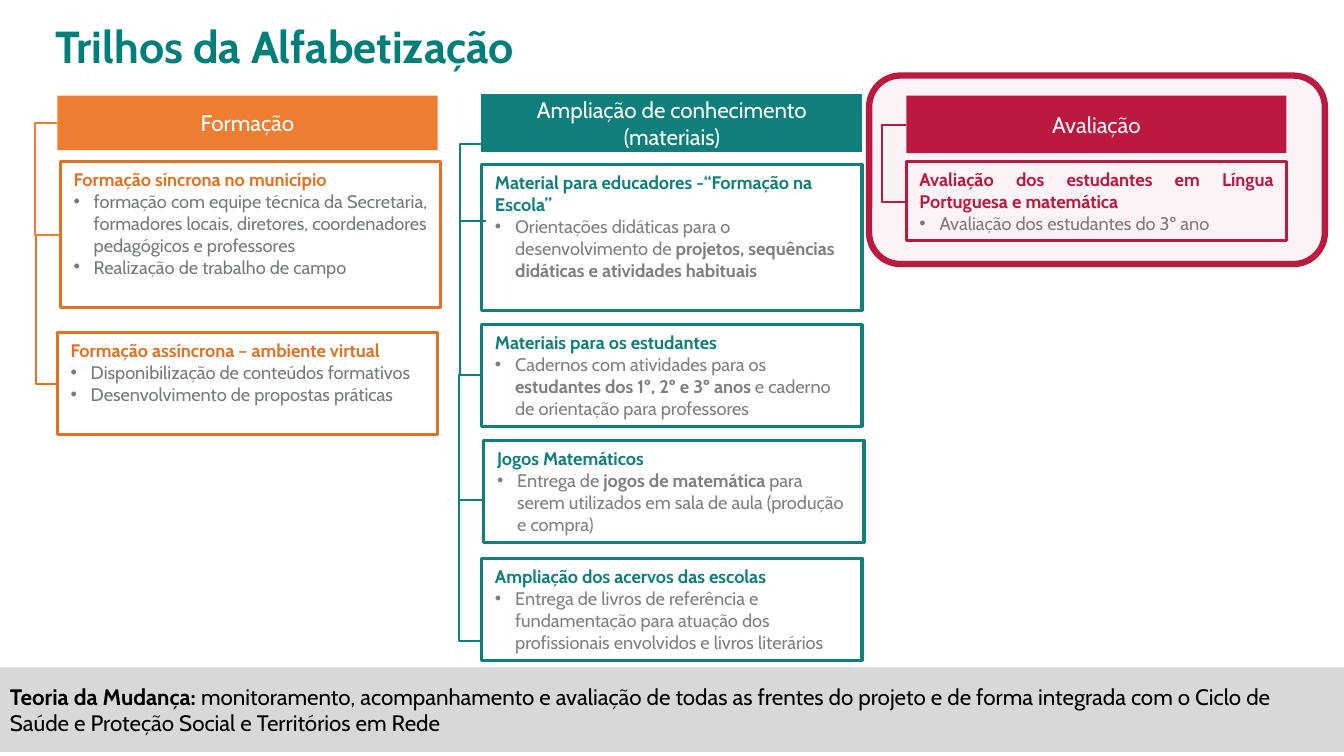
"""Build the "Trilhos da Alfabetização" slide: three tracks with bracketed cards."""
from dataclasses import dataclass

import lxml.etree
import pptx
import pptx.dml.color
import pptx.enum.shapes
import pptx.enum.text
import pptx.oxml.ns
import pptx.util

Inches = pptx.util.Inches
Pt = pptx.util.Pt
Shape = pptx.enum.shapes.MSO_SHAPE
Align = pptx.enum.text.PP_ALIGN
Anchor = pptx.enum.text.MSO_ANCHOR
qn = pptx.oxml.ns.qn

FONT = "Cabin"
ORANGE, BRIGHT_ORANGE = "E17223", "ED7D31"
TEAL, RED, WHITE = "107F7B", "BC1941", "FFFFFF"
GRAY, DARK_GRAY = "7F7F7F", "77797B"
COLUMN_WIDTH = 3.77
Runs = list[tuple[str, bool]]


@dataclass
class Header:
    text: str
    left: float
    top: float
    height: float
    color: str
    line: str | None = None


@dataclass
class Card:
    title: str
    bullets: list[Runs]
    left: float
    top: float
    height: float
    color: str
    text_color: str = GRAY
    fill: str | None = None
    align: Align = Align.JUSTIFY


@dataclass
class Bracket:
    start: tuple[float, float]
    end: tuple[float, float]
    spine: float
    color: str


HEADERS = [
    Header("Formação", 0.57, 0.95, 0.54, BRIGHT_ORANGE),
    Header("Ampliação de conhecimento (materiais)", 4.78, 0.94, 0.56, TEAL, TEAL),
    Header("Avaliação", 8.99, 0.95, 0.57, RED),
]
CARDS = [
    Card("Formação síncrona no município",
         [[("formação com equipe técnica da Secretaria, formadores locais, diretores, "
            "coordenadores pedagógicos e professores", False)],
          [("Realização de trabalho de campo", False)]],
         0.6, 1.6, 1.45, ORANGE, DARK_GRAY, WHITE),
    Card("Formação assíncrona – ambiente virtual",
         [[("Disponibilização de conteúdos formativos", False)],
          [("Desenvolvimento de propostas práticas", False)]],
         0.57, 3.3, 1.01, ORANGE, DARK_GRAY),
    Card("Material para educadores -“Formação na Escola”",
         [[("Orientações didáticas para o desenvolvimento de ", False),
           ("projetos, sequências didáticas e atividades habituais", True)]],
         4.78, 1.63, 1.45, TEAL, align=Align.LEFT),
    Card("Materiais para os estudantes",
         [[("Cadernos com atividades para os ", False),
           ("estudantes dos 1º, 2º e 3º anos ", True),
           ("e caderno de orientação para professores", False)]],
         4.78, 3.22, 1.01, TEAL),
    Card("Jogos Matemáticos",
         [[("Entrega de ", False), ("jogos de matemática ", True),
           ("para serem utilizados em sala de aula (produção e compra)", False)]],
         4.8, 4.37, 1.01, TEAL),
    Card("Ampliação dos acervos das escolas",
         [[("Entrega de livros de referência e fundamentação para atuação dos "
            "profissionais envolvidos e livros literários", False)]],
         4.78, 5.54, 1.01, TEAL),
    Card("Avaliação dos estudantes em Língua Portuguesa e matemática",
         [[("Avaliação dos estudantes do 3º ano", False)]],
         8.99, 1.6, 0.79, RED),
]
BRACKETS = [
    Bracket((0.57, 3.81), (0.36, 2.33), 0.36, ORANGE),
    Bracket((4.79, 3.72), (4.56, 2.17), 4.56, TEAL),
    Bracket((4.78, 4.96), (4.55, 3.71), 4.55, TEAL),
    Bracket((4.78, 6.36), (4.55, 4.86), 4.55, TEAL),
    Bracket((8.99, 1.24), (9.0, 2.0), 8.74, RED),
    Bracket((4.81, 1.43), (4.82, 2.19), 4.56, TEAL),
    Bracket((0.57, 1.22), (0.6, 2.33), 0.35, BRIGHT_ORANGE),
]
FOOTER: Runs = [
    ("Teoria da Mudança: ", True),
    ("monitoramento, acompanhamento e avaliação de todas as frentes do projeto e de forma "
     "integrada com o Ciclo de Saúde e Proteção Social e Territórios em Rede", False),
]


def rgb(color: str) -> pptx.dml.color.RGBColor:
    """Turn a hex string into a colour."""
    return pptx.dml.color.RGBColor.from_string(color)


def add_box(slide, shape: Shape, box: tuple, fill: str | None, line: str | None = None,
            width: float = 0.75):
    """Add a flat shape with an optional fill and outline."""
    sp = slide.shapes.add_shape(shape, *map(Inches, box))
    sp.shadow.inherit = False
    if fill:
        sp.fill.solid()
        sp.fill.fore_color.rgb = rgb(fill)
    else:
        sp.fill.background()
    if line:
        sp.line.color.rgb = rgb(line)
        sp.line.width = Pt(width)
    else:
        sp.line.fill.background()
    return sp


def set_frame(tf, anchor: Anchor, side: float, edge: float) -> None:
    """Set wrapping, anchoring and margins of a text frame."""
    tf.word_wrap = True
    tf.vertical_anchor = anchor
    tf.margin_left = tf.margin_right = Inches(side)
    tf.margin_top = tf.margin_bottom = Inches(edge)


def write(p, runs: Runs, size: float, color: str, align: Align = Align.LEFT) -> None:
    """Fill a paragraph with formatted runs."""
    p.alignment = align
    for text, bold in runs:
        r = p.add_run()
        r.text = text
        r.font.name = FONT
        r.font.size = Pt(size)
        r.font.bold = bold
        r.font.color.rgb = rgb(color)


def add_bullet(p, color: str) -> None:
    """Give a paragraph a coloured bullet with a hanging indent."""
    pPr = p._p.get_or_add_pPr()
    pPr.set("marL", str(Inches(0.2)))
    pPr.set("indent", str(Inches(-0.2)))
    clr = lxml.etree.SubElement(pPr, qn("a:buClr"))
    lxml.etree.SubElement(clr, qn("a:srgbClr"), val=color)
    lxml.etree.SubElement(pPr, qn("a:buFont"), typeface="Arial")
    lxml.etree.SubElement(pPr, qn("a:buChar"), char="•")


def add_card(slide, card: Card) -> None:
    """Draw an outlined card with a bold heading and bullets."""
    box = (card.left, card.top, COLUMN_WIDTH, card.height)
    tf = add_box(slide, Shape.RECTANGLE, box, card.fill, card.color, 2.25).text_frame
    set_frame(tf, Anchor.TOP, 0.13, 0.07)
    write(tf.paragraphs[0], [(card.title, True)], 13, card.color, card.align)
    for runs in card.bullets:
        p = tf.add_paragraph()
        add_bullet(p, card.text_color)
        write(p, runs, 13, card.text_color)


def add_bracket(slide, bracket: Bracket) -> None:
    """Draw an elbow connector that bends at the spine."""
    (x1, y1), (x2, y2) = bracket.start, bracket.end
    cx = slide.shapes.add_connector(pptx.enum.shapes.MSO_CONNECTOR.ELBOW,
                                    *map(Inches, (x1, y1, x2, y2)))
    cx.line.color.rgb = rgb(bracket.color)
    cx.line.width = Pt(1.5)
    spPr = cx._element.spPr
    lxml.etree.SubElement(spPr, qn("a:effectLst"))
    bend = round((bracket.spine - x1) / (x2 - x1) * 100000)
    guides = spPr.find(qn("a:prstGeom")).find(qn("a:avLst"))
    lxml.etree.SubElement(guides, qn("a:gd"), name="adj1", fmla=f"val {bend}")


def main() -> None:
    """Build and save the slide."""
    prs = pptx.Presentation()
    prs.slide_width, prs.slide_height = Inches(13.33), Inches(7.5)
    slide = prs.slides.add_slide(prs.slide_layouts[5])

    title = slide.shapes.title
    title.left, title.top, title.width, title.height = map(Inches, (0.55, 0.19, 9.73, 0.54))
    set_frame(title.text_frame, Anchor.TOP, 0, 0)
    title.text_frame.auto_size = pptx.enum.text.MSO_AUTO_SIZE.NONE
    write(title.text_frame.paragraphs[0], [("Trilhos da Alfabetização", True)], 32, "007E79")

    for header in HEADERS:
        box = (header.left, header.top, COLUMN_WIDTH, header.height)
        tf = add_box(slide, Shape.RECTANGLE, box, header.color, header.line).text_frame
        set_frame(tf, Anchor.MIDDLE, 0.1, 0.05)
        write(tf.paragraphs[0], [(header.text, False)], 16, WHITE, Align.CENTER)
    for card in CARDS:
        add_card(slide, card)
    for bracket in BRACKETS:
        add_bracket(slide, bracket)

    tf = add_box(slide, Shape.RECTANGLE, (0, 6.62, 13.33, 0.84), "D8D8D8").text_frame
    set_frame(tf, Anchor.MIDDLE, 0.1, 0.05)
    write(tf.paragraphs[0], FOOTER, 16, "000000")

    highlight = add_box(slide, Shape.ROUNDED_RECTANGLE, (8.62, 0.75, 4.52, 1.87), RED, RED, 4.5)
    tint = highlight._element.spPr.find(qn("a:solidFill")).find(qn("a:srgbClr"))
    lxml.etree.SubElement(tint, qn("a:alpha"), val="5000")
    prs.save("out.pptx")


if __name__ == "__main__":
    main()
